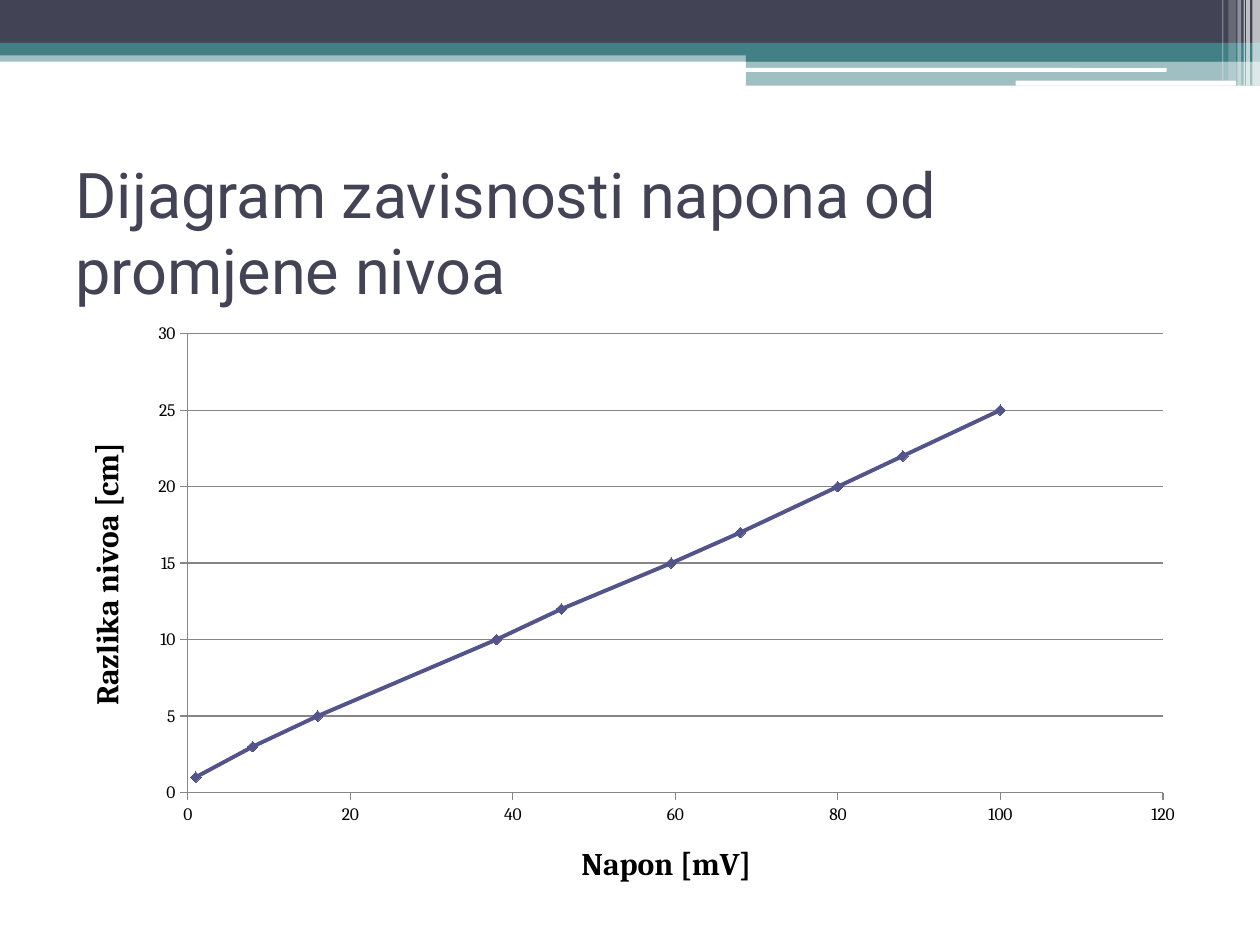
from typing import NamedTuple

from lxml import etree
from pptx import Presentation
from pptx import util as u
from pptx.chart.data import XyChartData
from pptx.dml.color import RGBColor
from pptx.enum import chart as charts, shapes, text
from pptx.oxml import parse_xml
from pptx.oxml.ns import nsdecls, qn

WIDTH, HEIGHT = 10, 7.5
COLORS = {
    "navy": "424456",
    "teal": "438086",
    "white": "FFFFFF",
    "line": "53548A",
    "grid": "868686",
    "ink": "000000",
}
POINTS = [(1, 1), (8, 3), (16, 5), (38, 10), (46, 12),
          (59.5, 15), (68, 17), (80, 20), (88, 22), (100, 25)]
PLOT_AREA = {"x": 0.11, "y": 0.04, "w": 0.86, "h": 0.77}


class Bar(NamedTuple):
    left: float
    top: float
    width: float
    height: float
    color: str
    opacity: int = 100
    rounded: bool = False


class Stripe(NamedTuple):
    left: float
    width: float
    height: float
    opacity: int


BARS = [
    Bar(0, 0.4, WIDTH, 0.09, "teal", 50),
    Bar(0, 0, WIDTH, 0.34, "navy"),
    Bar(0, 0.34, WIDTH, 0.1, "teal"),
    Bar(5.92, 0.39, 4.08, 0.1, "teal"),
    Bar(5.92, 0.48, 4.08, 0.2, "teal", 50),
    Bar(5.91, 0.54, 3.35, 0.03, "white", rounded=True),
    Bar(8.06, 0.64, 1.75, 0.04, "white", rounded=True),
]
STRIPES = [
    Stripe(9.94, 0.06, 0.68, 65),
    Stripe(9.89, 0.03, 0.68, 65),
    Stripe(9.87, 0.01, 0.68, 60),
    Stripe(9.82, 0.03, 0.68, 40),
    Stripe(9.75, 0.06, 0.64, 20),
    Stripe(9.7, 0.01, 0.64, 30),
]


def color(name: str) -> RGBColor:
    return RGBColor.from_string(COLORS[name])


def place(item, left: float, top: float, width: float, height: float) -> None:
    item.left, item.top = u.Inches(left), u.Inches(top)
    item.width, item.height = u.Inches(width), u.Inches(height)


def draw_bar(page, bar: Bar) -> None:
    kind = shapes.MSO_SHAPE.ROUNDED_RECTANGLE if bar.rounded else shapes.MSO_SHAPE.RECTANGLE
    box = page.shapes.add_shape(kind, 0, 0, 0, 0)
    place(box, bar.left, bar.top, bar.width, bar.height)
    box.shadow.inherit = False
    box.line.fill.background()
    box.fill.solid()
    box.fill.fore_color.rgb = color(bar.color)
    if bar.opacity < 100:
        fill = box.fill._xPr.find(qn("a:solidFill"))
        etree.SubElement(fill[0], qn("a:alpha"), val=str(bar.opacity * 1000))


def write_title(page, words: str) -> None:
    title = page.shapes.title
    place(title, 0.5, 1.25, 9, 1.17)
    frame = title.text_frame
    frame.text = words
    frame.word_wrap = True
    frame.auto_size = text.MSO_AUTO_SIZE.NONE
    frame.vertical_anchor = text.MSO_ANCHOR.MIDDLE
    para = frame.paragraphs[0]
    para.alignment = text.PP_ALIGN.LEFT
    font = para.runs[0].font
    font.name, font.size = "Roboto", u.Pt(36)
    font.color.rgb = color("navy")


def format_axis(axis, words: str, maximum: int, step: int, grid: bool) -> None:
    axis.minimum_scale, axis.maximum_scale, axis.major_unit = 0, maximum, step
    axis.major_tick_mark = charts.XL_TICK_MARK.OUTSIDE
    axis.minor_tick_mark = charts.XL_TICK_MARK.NONE
    axis.format.line.color.rgb = color("grid")
    axis.format.line.width = u.Pt(0.75)
    axis.has_major_gridlines = grid
    if grid:
        axis.major_gridlines.format.line.color.rgb = color("grid")
        axis.major_gridlines.format.line.width = u.Pt(0.75)
    axis.has_title = True
    frame = axis.axis_title.text_frame
    frame.text = words
    font = frame.paragraphs[0].runs[0].font
    font.name, font.size, font.bold = "Cambria", u.Pt(18), True
    font.color.rgb = color("ink")


def fix_plot_area(chart) -> None:
    """Pin the inner plot area to fixed shares of the chart."""
    area = chart._chartSpace.chart.plotArea
    for old in area.findall(qn("c:layout")):
        area.remove(old)
    modes = '<c:xMode val="edge"/><c:yMode val="edge"/>'
    shares = "".join(f'<c:{key} val="{share}"/>' for key, share in PLOT_AREA.items())
    area.insert(0, parse_xml(
        f'<c:layout {nsdecls("c")}><c:manualLayout><c:layoutTarget val="inner"/>'
        f"{modes}{shares}</c:manualLayout></c:layout>"))


def draw_chart(page) -> None:
    data = XyChartData()
    series = data.add_series("Series 1")
    for voltage, level in POINTS:
        series.add_data_point(voltage, level)
    frame = page.shapes.add_chart(charts.XL_CHART_TYPE.XY_SCATTER_SMOOTH, 0, 0, 0, 0, data)
    place(frame, 0.5, 2.46, 9, 4.73)
    chart = frame.chart
    chart.has_title = chart.has_legend = False
    chart.font.name, chart.font.size = "Cambria", u.Pt(10)
    chart.font.color.rgb = color("ink")
    format_axis(chart.category_axis, "Napon [mV]", 120, 20, grid=False)
    format_axis(chart.value_axis, "Razlika nivoa [cm]", 30, 5, grid=True)
    fix_plot_area(chart)

    plot = chart.plots[0]
    plot.vary_by_categories = False
    curve = plot.series[0]
    curve.smooth = True
    curve.format.line.color.rgb = color("line")
    curve.format.line.width = u.Pt(2.25)
    marker = curve.marker
    marker.style, marker.size = charts.XL_MARKER_STYLE.DIAMOND, 6
    marker.format.fill.solid()
    marker.format.fill.fore_color.rgb = color("line")
    marker.format.line.color.rgb = color("line")


def main() -> None:
    deck = Presentation()
    deck.slide_width, deck.slide_height = u.Inches(WIDTH), u.Inches(HEIGHT)
    page = deck.slides.add_slide(deck.slide_layouts.get_by_name("Title Only"))
    for bar in BARS:
        draw_bar(page, bar)
    for stripe in STRIPES:
        draw_bar(page, Bar(stripe.left, 0, stripe.width, stripe.height, "white", stripe.opacity))
    write_title(page, "Dijagram zavisnosti napona od promjene nivoa")
    draw_chart(page)
    deck.save("out.pptx")


if __name__ == "__main__":
    main()
